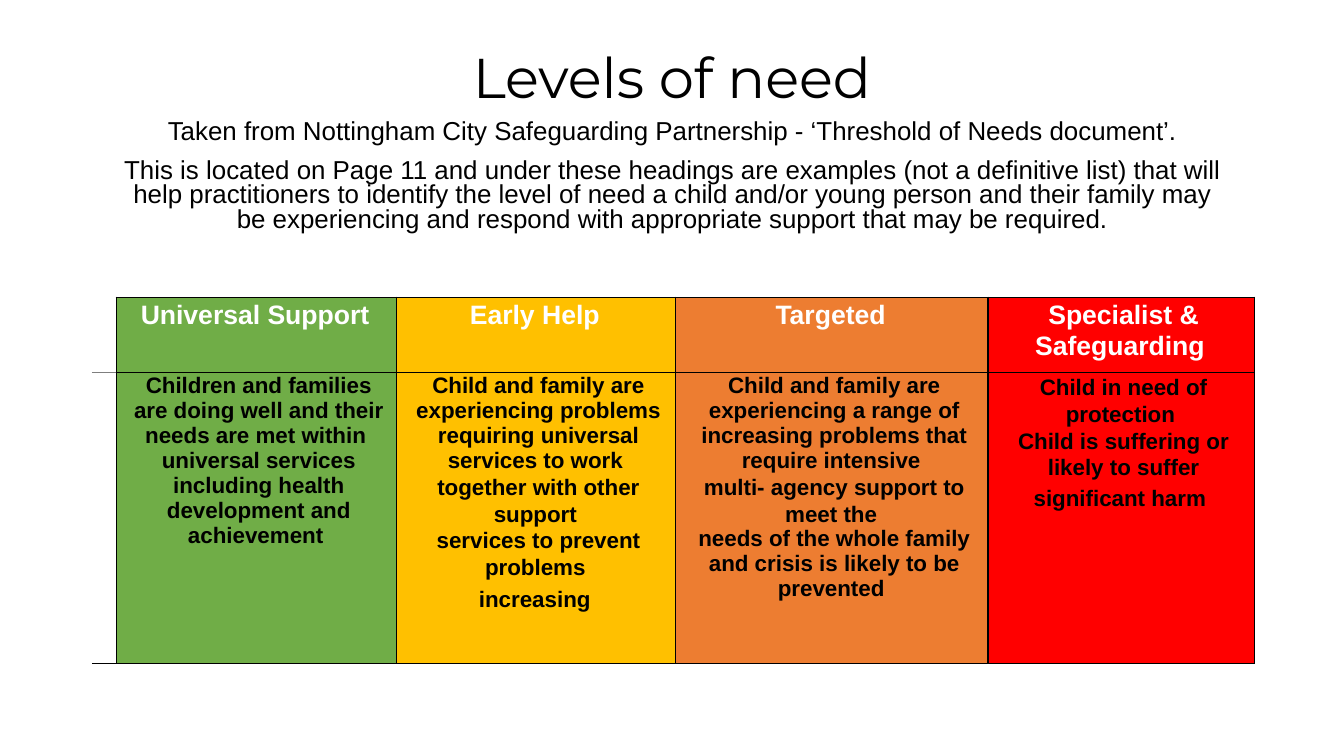
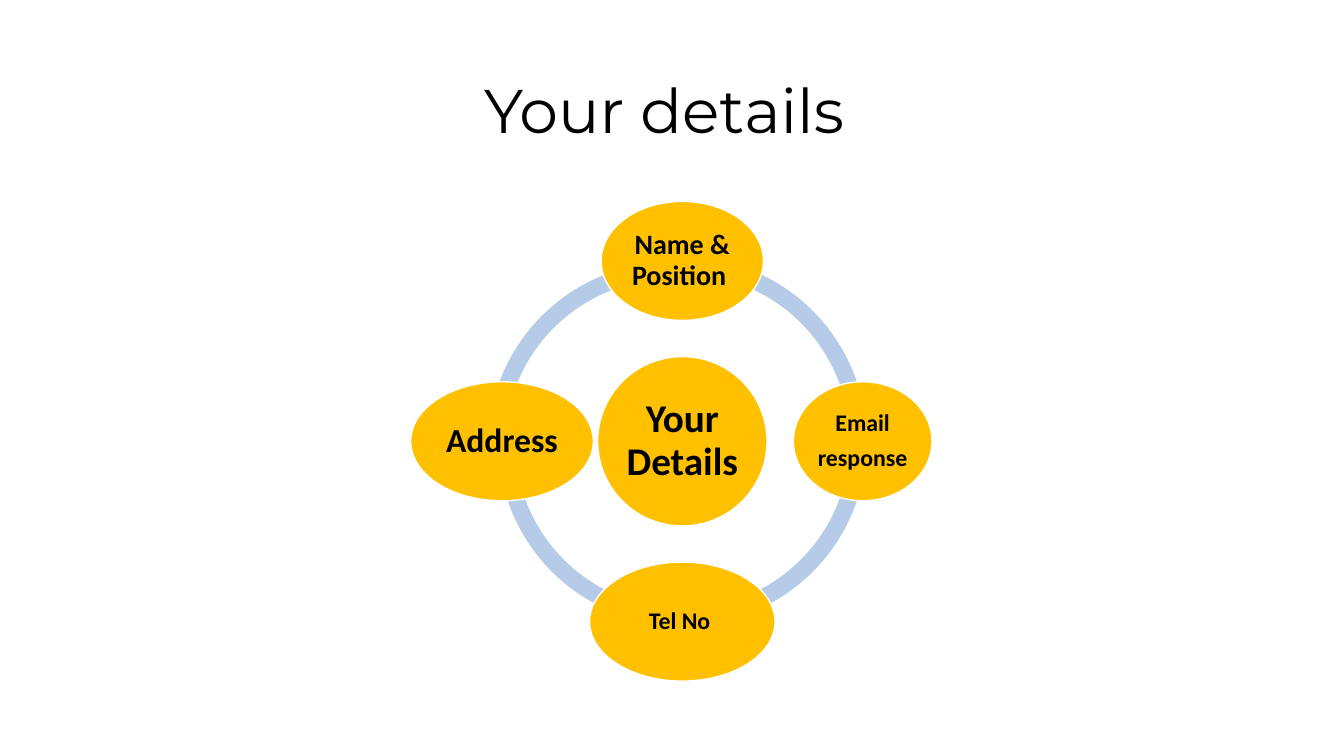
import math

from lxml import etree
from pptx import Presentation
from pptx.dml.color import RGBColor
from pptx.enum.shapes import MSO_SHAPE
from pptx.enum.text import MSO_ANCHOR, PP_ALIGN
from pptx.oxml.ns import qn
from pptx.util import Pt

CENTER = PP_ALIGN.CENTER
TOP, MIDDLE = MSO_ANCHOR.TOP, MSO_ANCHOR.MIDDLE
ELLIPSE, BLOCK_ARC = MSO_SHAPE.OVAL, MSO_SHAPE.BLOCK_ARC

BLACK = RGBColor(0x00, 0x00, 0x00)
WHITE = RGBColor(0xFF, 0xFF, 0xFF)
GREEN = RGBColor(0x70, 0xAD, 0x47)
AMBER = RGBColor(0xFF, 0xC0, 0x00)
ORANGE = RGBColor(0xED, 0x7D, 0x31)
RED = RGBColor(0xFF, 0x00, 0x00)
PALE_BLUE = RGBColor(0xB5, 0xCB, 0xE7)
GREY = RGBColor(0x7F, 0x7F, 0x7F)

TITLE_FONT, BODY_FONT, DIAGRAM_FONT = "Montserrat", "Arial", "Calibri"

INTRO = [
    "Taken from Nottingham City Safeguarding Partnership - ‘Threshold of Needs document’.",
    "This is located on Page 11 and under these headings are examples (not a definitive list) "
    "that will help practitioners to identify the level of need a child and/or young person and "
    "their family may be experiencing and respond with appropriate support that may be required.",
]

# Heading, colour, column width, then paragraphs as (text, line spacing, space after)
LEVELS = [
    ("Universal Support ", GREEN, 200.2, [
        ("Children and families are doing well and their needs are met within ", 1.0, 0.2),
        ("universal services including health development and achievement ", 1.0, 0.2),
    ]),
    ("Early Help ", AMBER, 199.4, [
        ("Child and family are experiencing problems requiring universal services to work ", 1.0, 0.2),
        ("together with other support ", 1.07, 0.2),
        ("services to prevent problems ", 1.07, 0.8),
        ("increasing", 1.07, 0.2),
    ]),
    ("Targeted ", ORANGE, 223.2, [
        ("Child and family are experiencing a range of increasing problems that require intensive ", 1.0, 0.2),
        ("multi- agency support to meet the ", 1.07, 0.2),
        ("needs of the whole family and crisis is likely to be prevented ", 0.99, 2),
    ]),
    ("Specialist & Safeguarding ", RED, 190.1, [
        ("Child in need of protection ", 1.07, 0.2),
        ("Child is suffering or likely to suffer significant harm", 1.07, 0.2),
    ]),
]
MARGIN_COLUMN = 15.1
TABLE_LEFT, TABLE_TOP = 65.7, 212.3
ROW_HEIGHTS = (54, 207.4)
HEADING_SIZE, CELL_SIZE = 19, 16

# Paragraphs, ellipse width, text size; clockwise from the top
HUB = (["Your Details"], 121, 28)
SATELLITES = [
    (["Name & Position "], 116, 20),
    (["Email", "response"], 99, 17),
    (["Tel No "], 132.5, 17),
    (["Address"], 130.5, 24),
]
HUB_X, HUB_Y, ORBIT = 487.4, 315.2, 128.8
SATELLITE_HEIGHT = 85
RING_SIZE, RING_THICKNESS = 263.5, 0.046
# Start and end angle in degrees, horizontal and vertical shift
RING_ARCS = [(180, 270, -7.2, 3.6), (90, 180, 0, 0), (0, 90, 0, 0), (270, 0, 0, 0)]


def apply(target, values):
    for name, value in values.items():
        setattr(target, name, value)


def add_span(para, text, size, font, color=BLACK, bold=False):
    span = para.add_run()
    span.text = text
    apply(span.font, {"size": Pt(size), "name": font, "bold": bold})
    span.font.color.rgb = color


def add_para(frame, text, size, font, color=BLACK, bold=False, **spacing):
    para = frame.paragraphs[0]
    if para.runs:
        para = frame.add_paragraph()
    apply(para, {"alignment": CENTER, **spacing})
    add_span(para, text, size, font, color, bold)
    return para


def add_box(page, left, top, width, height):
    frame = page.shapes.add_textbox(Pt(left), Pt(top), Pt(width), Pt(height)).text_frame
    apply(frame, {"word_wrap": True, "vertical_anchor": MIDDLE})
    return frame


def add_title(page, text, size, *place):
    add_para(add_box(page, *place), text, size, TITLE_FONT, line_spacing=0.9)


def add_shape(page, kind, left, top, width, height, color):
    shape = page.shapes.add_shape(kind, Pt(left), Pt(top), Pt(width), Pt(height))
    shape.shadow.inherit = False
    shape.fill.solid()
    shape.fill.fore_color.rgb = color
    shape.line.fill.background()
    return shape


def set_borders(cell, **colors):
    """Draw the named sides (L, R, T, B) at 1 pt and clear the others."""
    properties = cell._tc.get_or_add_tcPr()
    for side in "LRTB":
        line = etree.SubElement(properties, qn(f"a:ln{side}"), w=str(Pt(1)))
        if side in colors:
            fill = etree.SubElement(line, qn("a:solidFill"))
            etree.SubElement(fill, qn("a:srgbClr"), val=str(colors[side]))
        else:
            etree.SubElement(line, qn("a:noFill"))


def style_level_cell(cell, color):
    set_borders(cell, **dict.fromkeys("LRTB", BLACK))
    cell.fill.solid()
    cell.fill.fore_color.rgb = color
    apply(cell, {"margin_left": Pt(8.6), "margin_right": Pt(5), "margin_top": Pt(0.7),
                 "margin_bottom": 0, "vertical_anchor": TOP})


def add_levels_table(page):
    widths = [MARGIN_COLUMN] + [level[2] for level in LEVELS]
    table = page.shapes.add_table(
        len(ROW_HEIGHTS), len(widths), Pt(TABLE_LEFT), Pt(TABLE_TOP),
        Pt(sum(widths)), Pt(sum(ROW_HEIGHTS))).table
    apply(table, {"first_row": False, "horz_banding": False})
    for column, width in zip(table.columns, widths):
        column.width = Pt(width)
    for row, height in zip(table.rows, ROW_HEIGHTS):
        row.height = Pt(height)

    set_borders(table.cell(0, 0), R=BLACK, B=GREY)
    set_borders(table.cell(1, 0), T=GREY, R=BLACK, B=BLACK)
    for row in range(len(ROW_HEIGHTS)):
        table.cell(row, 0).fill.background()

    for index, (heading, color, _, paragraphs) in enumerate(LEVELS, start=1):
        head, body = table.cell(0, index), table.cell(1, index)
        for cell in (head, body):
            style_level_cell(cell, color)
        add_para(head.text_frame, heading, HEADING_SIZE, BODY_FONT, WHITE, True,
                 line_spacing=1.07, space_after=Pt(0.2))
        for text, spacing, after in paragraphs:
            para = add_para(body.text_frame, text, CELL_SIZE, BODY_FONT, BLACK, True,
                            line_spacing=spacing, space_after=Pt(after))
        if not text.endswith(" "):
            add_span(para, " ", HEADING_SIZE, BODY_FONT, BLACK, True)


def add_node(page, center_x, center_y, height, paragraphs, width, size):
    node = add_shape(page, ELLIPSE, center_x - width / 2, center_y - height / 2,
                     width, height, AMBER)
    node.line.color.rgb = WHITE
    node.line.width = Pt(1)
    frame = node.text_frame
    inset = Pt(2)
    apply(frame, {"word_wrap": True, "vertical_anchor": MIDDLE, "margin_left": inset,
                  "margin_right": inset, "margin_top": inset, "margin_bottom": inset})
    for text in paragraphs:
        add_para(frame, text, size, DIAGRAM_FONT, BLACK, True,
                 line_spacing=0.9, space_after=Pt(6))


def build_levels(page):
    add_title(page, "Levels of need", 40, 79.2, 13.7, 801.4, 87.8)
    intro = add_box(page, 79.2, 77.8, 801.4, 97.2)
    for index, text in enumerate(INTRO):
        add_para(intro, text, 18.5, BODY_FONT, line_spacing=0.8,
                 space_before=Pt(10 if index else 0))
    add_levels_table(page)


def build_details(page):
    add_title(page, "Your details ", 44, 66.2, 28.8, 828, 104.4)
    for start, end, shift_x, shift_y in RING_ARCS:
        arc = add_shape(page, BLOCK_ARC, HUB_X - RING_SIZE / 2 + shift_x,
                        HUB_Y - RING_SIZE / 2 + shift_y, RING_SIZE, RING_SIZE, PALE_BLUE)
        # Angles are stored in 60000ths of a degree, adjustments in 100000ths
        for index, value in enumerate((start * 0.6, end * 0.6, RING_THICKNESS)):
            arc.adjustments[index] = value
    add_node(page, HUB_X, HUB_Y, HUB[1], *HUB)
    for index, satellite in enumerate(SATELLITES):
        angle = math.tau * index / len(SATELLITES)
        add_node(page, HUB_X + ORBIT * math.sin(angle), HUB_Y - ORBIT * math.cos(angle),
                 SATELLITE_HEIGHT, *satellite)


def main():
    deck = Presentation()
    apply(deck, {"slide_width": Pt(960), "slide_height": Pt(540)})
    for build in (build_levels, build_details):
        build(deck.slides.add_slide(deck.slide_layouts[6]))
    deck.save("out.pptx")


if __name__ == "__main__":
    main()
